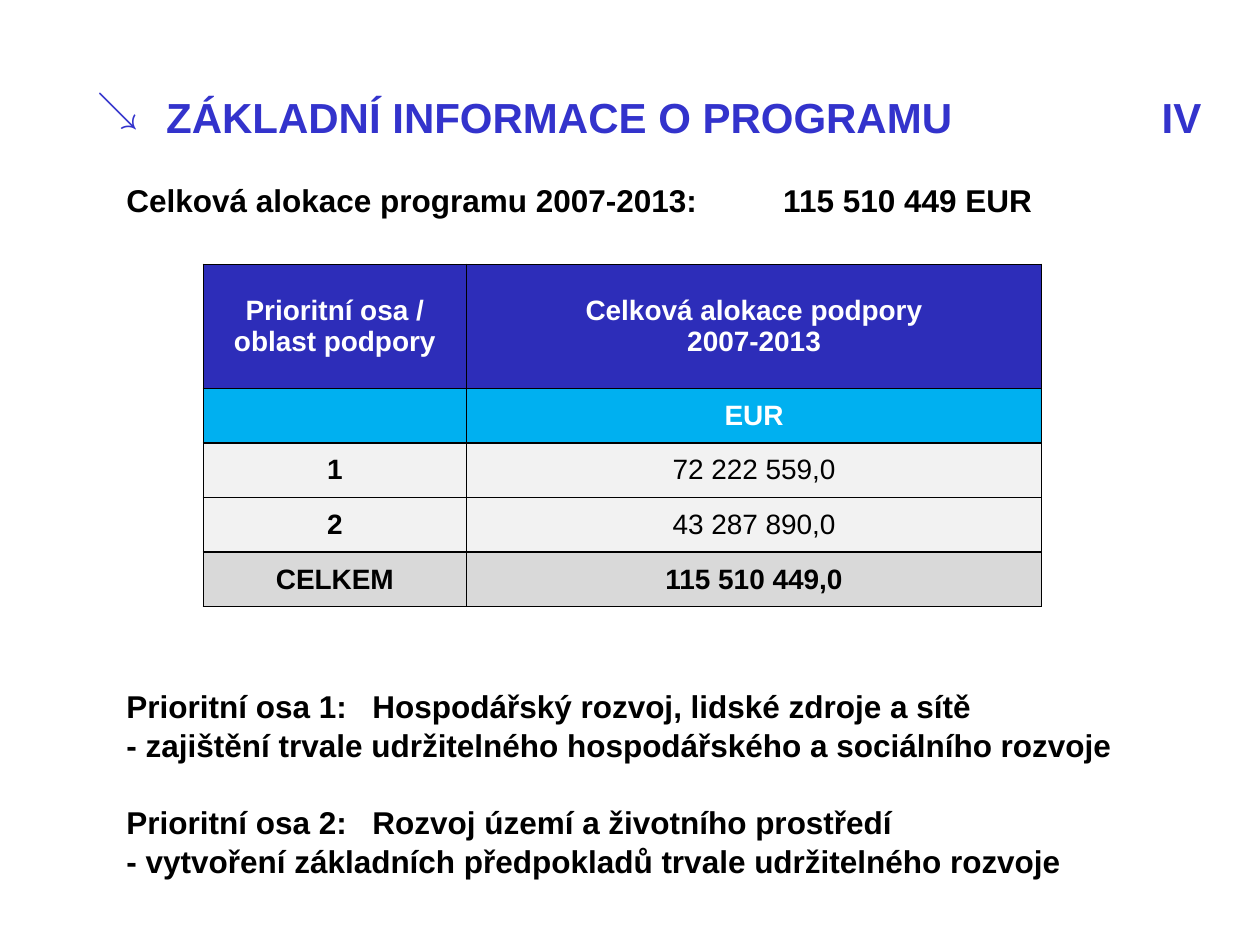
from lxml.etree import SubElement
from pptx import Presentation
from pptx.dml.color import RGBColor
from pptx.enum.text import MSO_ANCHOR as Anchor, PP_ALIGN as Align
from pptx.oxml.ns import qn
from pptx.util import Cm, Pt

FONT = "Arial"
BLACK = RGBColor(0x00, 0x00, 0x00)
WHITE = RGBColor(0xFF, 0xFF, 0xFF)
TITLE_BLUE = RGBColor(0x33, 0x33, 0xCC)
HEADER_BLUE = RGBColor(0x2D, 0x2D, 0xB9)
UNIT_BLUE = RGBColor(0x00, 0xB0, 0xF0)
ROW_GREY = RGBColor(0xF2, 0xF2, 0xF2)
TOTAL_GREY = RGBColor(0xD9, 0xD9, 0xD9)

TITLE = {"size": Pt(24), "bold": True, "color": TITLE_BLUE}
ARROW = {**TITLE, "bold": False}
BODY = {"size": Pt(18), "bold": True, "color": BLACK}
HEADER = {"size": Pt(16), "bold": True, "color": WHITE}
LABEL = {**HEADER, "color": BLACK}
AMOUNT = {**LABEL, "bold": False}


def write(paragraph, text, font_format, tab=None):
    """Fill a paragraph, with an optional left tab stop."""
    paragraph.text = text
    if tab is not None:
        tab_list = SubElement(paragraph._p.get_or_add_pPr(), qn("a:tabLst"))
        SubElement(tab_list, qn("a:tab"), pos=str(tab), algn="l")
    font = paragraph.font
    font.name = FONT
    for name, value in font_format.items():
        if name == "color":
            font.color.rgb = value
        else:
            setattr(font, name, value)


def draw_borders(cell):
    properties = cell._tc.get_or_add_tcPr()
    for side in ("a:lnL", "a:lnR", "a:lnT", "a:lnB"):
        line = SubElement(properties, qn(side), w=str(Pt(1)))
        fill = SubElement(line, qn("a:solidFill"))
        SubElement(fill, qn("a:srgbClr"), val=str(BLACK))


presentation = Presentation()
presentation.slide_width = Cm(25.4)
presentation.slide_height = Cm(19.05)
slide = presentation.slides.add_slide(presentation.slide_layouts[6])

# Heading, total and priority descriptions
text_boxes = [
    ((3.1, 1.73, 21.4, 1.27), Anchor.TOP, TITLE, Cm(20.07),
     ["ZÁKLADNÍ INFORMACE O PROGRAMU\tIV"]),
    ((1.7, 1.52, 1.27, 1.27), Anchor.TOP, ARROW, None, ["↘"]),
    ((2.3, 3.53, 19, 1.02), Anchor.MIDDLE, BODY, Cm(13.24),
     ["Celková alokace programu 2007-2013:\t115 510 449 EUR"]),
    ((2.3, 13.72, 20.8, 4.11), Anchor.MIDDLE, BODY, Cm(4.96),
     ["Prioritní osa 1:\tHospodářský rozvoj, lidské zdroje a sítě",
      "- zajištění trvale udržitelného hospodářského a sociálního rozvoje",
      "Prioritní osa 2:\tRozvoj území a životního prostředí",
      "- vytvoření základních předpokladů trvale udržitelného rozvoje"]),
]
for position, anchor, font_format, tab, lines in text_boxes:
    frame = slide.shapes.add_textbox(*map(Cm, position)).text_frame
    frame.word_wrap = True
    frame.vertical_anchor = anchor
    for index, text in enumerate(lines):
        paragraph = frame.paragraphs[0] if index == 0 else frame.add_paragraph()
        if len(lines) > 1:
            paragraph.line_spacing = 1.04
        if index == 2:
            paragraph.space_before = Pt(21.6)
        write(paragraph, text, font_format, tab if "\t" in text else None)

# Allocation table: fill, label format, amount format, label, amount lines
rows = [
    (HEADER_BLUE, HEADER, HEADER, "Prioritní osa / oblast podpory",
     ["Celková alokace podpory", "2007-2013"]),
    (UNIT_BLUE, HEADER, HEADER, "", ["EUR"]),
    (ROW_GREY, LABEL, AMOUNT, "1", ["72 222 559,0"]),
    (ROW_GREY, LABEL, AMOUNT, "2", ["43 287 890,0"]),
    (TOTAL_GREY, LABEL, LABEL, "CELKEM", ["115 510 449,0"]),
]
table = slide.shapes.add_table(
    len(rows), 2, Cm(4.1), Cm(5.33), Cm(16.9), Cm(6.9)).table
table.first_row = False
table.horz_banding = False
for column, width in zip(table.columns, (5.3, 11.6)):
    column.width = Cm(width)

for row_index, (fill, label_format, amount_format, label, amounts) in enumerate(rows):
    table.rows[row_index].height = Cm(2.5 if row_index == 0 else 1.1)
    contents = [([label], label_format), (amounts, amount_format)]
    for column_index, (lines, font_format) in enumerate(contents):
        cell = table.cell(row_index, column_index)
        draw_borders(cell)
        cell.fill.solid()
        cell.fill.fore_color.rgb = fill
        cell.vertical_anchor = Anchor.MIDDLE
        frame = cell.text_frame
        for index, text in enumerate(lines):
            paragraph = frame.paragraphs[0] if index == 0 else frame.add_paragraph()
            paragraph.alignment = Align.CENTER
            write(paragraph, text, font_format)

presentation.save("out.pptx")
